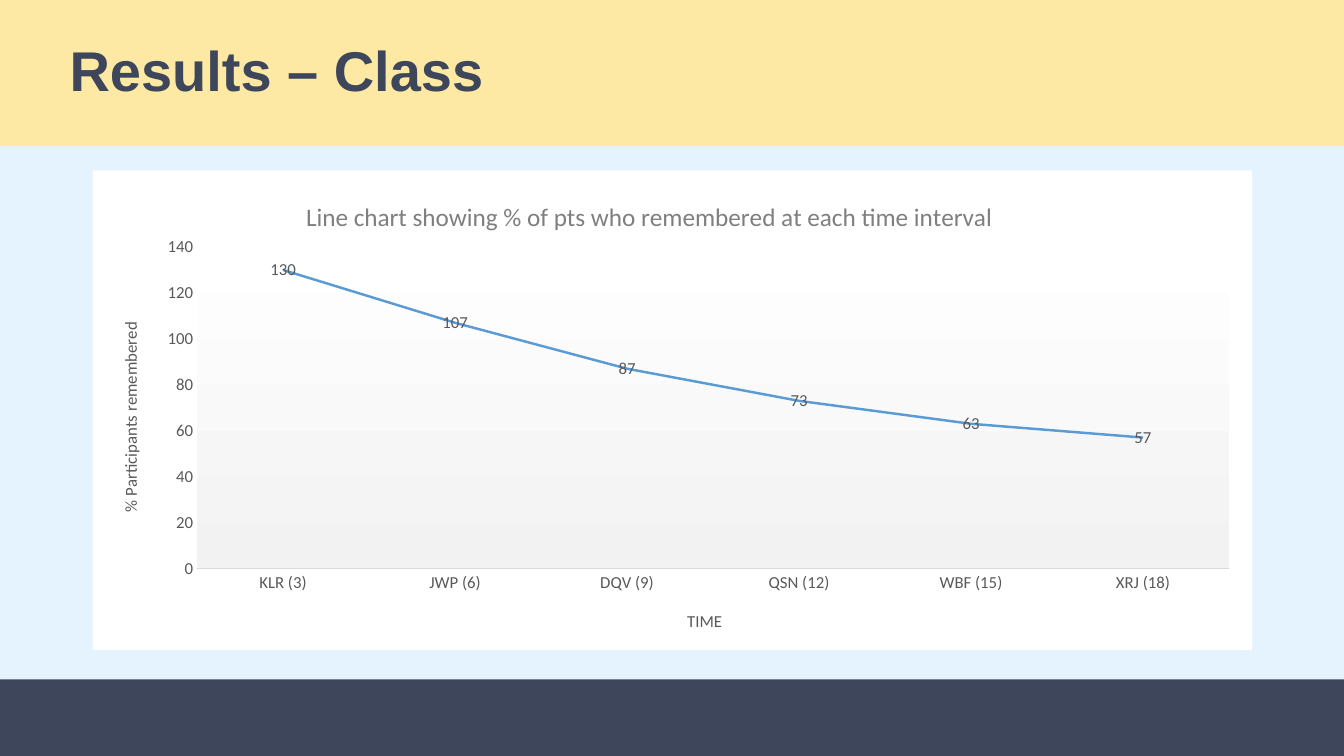
"""Build the class results slide with its line chart of remembered items over time."""
import pptx
import pptx.util
import pptx.oxml
import pptx.oxml.ns
import pptx.chart.data
import pptx.dml.color
import pptx.enum.chart
import pptx.enum.shapes
import pptx.enum.text

Inches, Pt = pptx.util.Inches, pptx.util.Pt
RGBColor = pptx.dml.color.RGBColor
qn = pptx.oxml.ns.qn

NAVY = RGBColor(0x3D, 0x46, 0x5A)
YELLOW = RGBColor(0xFE, 0xE9, 0xA4)
PALE_BLUE = RGBColor(0xE5, 0xF3, 0xFF)
LINE_BLUE = RGBColor(0x5B, 0x9B, 0xD5)
TEXT_GREY = RGBColor(0x59, 0x59, 0x59)
TITLE_GREY = RGBColor(0x7F, 0x7F, 0x7F)
AXIS_GREY = RGBColor(0xD9, 0xD9, 0xD9)
NAMESPACES = pptx.oxml.ns.nsdecls("c", "a")


def place(element, index, **fractions):
    """Give a chart part a fixed place, in fractions of the chart."""
    for layout in element.findall(qn("c:layout")):
        element.remove(layout)
    target = '<c:layoutTarget val="inner"/>' if "w" in fractions else ""
    modes = "".join(f'<c:{key}Mode val="edge"/>' for key in fractions if key in "xy")
    values = "".join(f'<c:{key} val="{value}"/>' for key, value in fractions.items())
    element.insert(index, pptx.oxml.parse_xml(
        f"<c:layout {NAMESPACES}><c:manualLayout>{target}{modes}{values}"
        "</c:manualLayout></c:layout>"))


def write_title(owner, text, size, color, x, y):
    """Write and place the title of the chart or of an axis."""
    title = owner.chart_title if hasattr(owner, "chart_title") else owner.axis_title
    run = title.text_frame.paragraphs[0].add_run()
    run.text = text
    run.font.name = "Calibri"
    run.font.size = Pt(size)
    run.font.bold = False
    run.font.color.rgb = color
    place(title._element, 1, x=x, y=y)


deck = pptx.Presentation()
deck.slide_width, deck.slide_height = Inches(13.33), Inches(7.5)
slide = deck.slides.add_slide(deck.slide_layouts[6])
slide.background.fill.solid()
slide.background.fill.fore_color.rgb = PALE_BLUE

bands = []
for top, height, color in [(6.74, 0.76, NAVY), (0, 1.45, YELLOW)]:
    band = slide.shapes.add_shape(pptx.enum.shapes.MSO_SHAPE.RECTANGLE, 0,
                                  Inches(top), Inches(13.33), Inches(height))
    band.shadow.inherit = False
    band.fill.solid()
    band.fill.fore_color.rgb = color
    band.line.fill.background()
    bands.append(band)

heading = bands[-1].text_frame
heading.word_wrap = True
heading.vertical_anchor = pptx.enum.text.MSO_ANCHOR.MIDDLE
heading.margin_left = Inches(0.69)
heading_line = heading.paragraphs[0]
heading_line.alignment = pptx.enum.text.PP_ALIGN.LEFT
heading_line.line_spacing = 0.9
heading_run = heading_line.add_run()
heading_run.text = "Results – Class"
heading_run.font.name = "Arial"
heading_run.font.size = Pt(40)
heading_run.font.bold = True
heading_run.font.color.rgb = NAVY

recall = pptx.chart.data.CategoryChartData()
recall.categories = ["KLR (3)", "JWP (6)", "DQV (9)", "QSN (12)", "WBF (15)", "XRJ (18)"]
recall.add_series("Series 1", [130, 107, 87, 73, 63, 57])
chart = slide.shapes.add_chart(
    pptx.enum.chart.XL_CHART_TYPE.LINE, Inches(0.92), Inches(1.69),
    Inches(11.5), Inches(4.76), recall).chart
chart.has_legend = False
chart.font.name = "Calibri"
chart.font.size = Pt(12)
chart.font.color.rgb = TEXT_GREY

write_title(chart, "Line chart showing % of pts who remembered at each time interval",
            18, TITLE_GREY, 0.18, 0.05)
time_axis, count_axis = chart.category_axis, chart.value_axis
write_title(time_axis, "TIME", 12, TEXT_GREY, 0.51, 0.91)
write_title(count_axis, "% Participants remembered", 12, TEXT_GREY, 0.02, 0.31)

for axis in (time_axis, count_axis):
    axis.has_major_gridlines = False
    axis.major_tick_mark = pptx.enum.chart.XL_TICK_MARK.NONE
    axis.minor_tick_mark = pptx.enum.chart.XL_TICK_MARK.NONE
    axis.tick_labels.font.name = "Calibri"
    axis.tick_labels.font.size = Pt(12)
    axis.tick_labels.font.color.rgb = TEXT_GREY
time_axis.format.line.color.rgb = AXIS_GREY
time_axis.format.line.width = Pt(0.75)
count_axis.format.line.fill.background()
count_axis.minimum_scale, count_axis.maximum_scale = 0, 140
count_axis.major_unit = 20

plot = chart.plots[0]
plot.vary_by_categories = False
remembered = plot.series[0]
remembered.smooth = False
remembered.marker.style = pptx.enum.chart.XL_MARKER_STYLE.NONE
remembered.format.line.color.rgb = LINE_BLUE
remembered.format.line.width = Pt(1.75)
labels = remembered.data_labels
labels.show_value = True
labels.position = pptx.enum.chart.XL_LABEL_POSITION.CENTER
labels.font.name = "Calibri"
labels.font.size = Pt(12)
labels.font.color.rgb = TEXT_GREY

chart_body = chart._chartSpace.find(qn("c:chart"))
plot_area = chart_body.find(qn("c:plotArea"))
place(plot_area, 0, x=0.09, y=0.16, w=0.89, h=0.67)
plot_area.append(pptx.oxml.parse_xml(
    f'<c:spPr {NAMESPACES}><a:gradFill><a:gsLst>'
    '<a:gs pos="0"><a:srgbClr val="FFFFFF"/></a:gs>'
    '<a:gs pos="100000"><a:srgbClr val="F2F2F2"/></a:gs>'
    '</a:gsLst><a:lin ang="5400000" scaled="0"/></a:gradFill>'
    '<a:ln><a:noFill/></a:ln></c:spPr>'))
chart_body.addnext(pptx.oxml.parse_xml(
    f'<c:spPr {NAMESPACES}><a:solidFill><a:srgbClr val="FFFFFF"/></a:solidFill>'
    '<a:ln><a:noFill/></a:ln></c:spPr>'))

deck.save("out.pptx")
